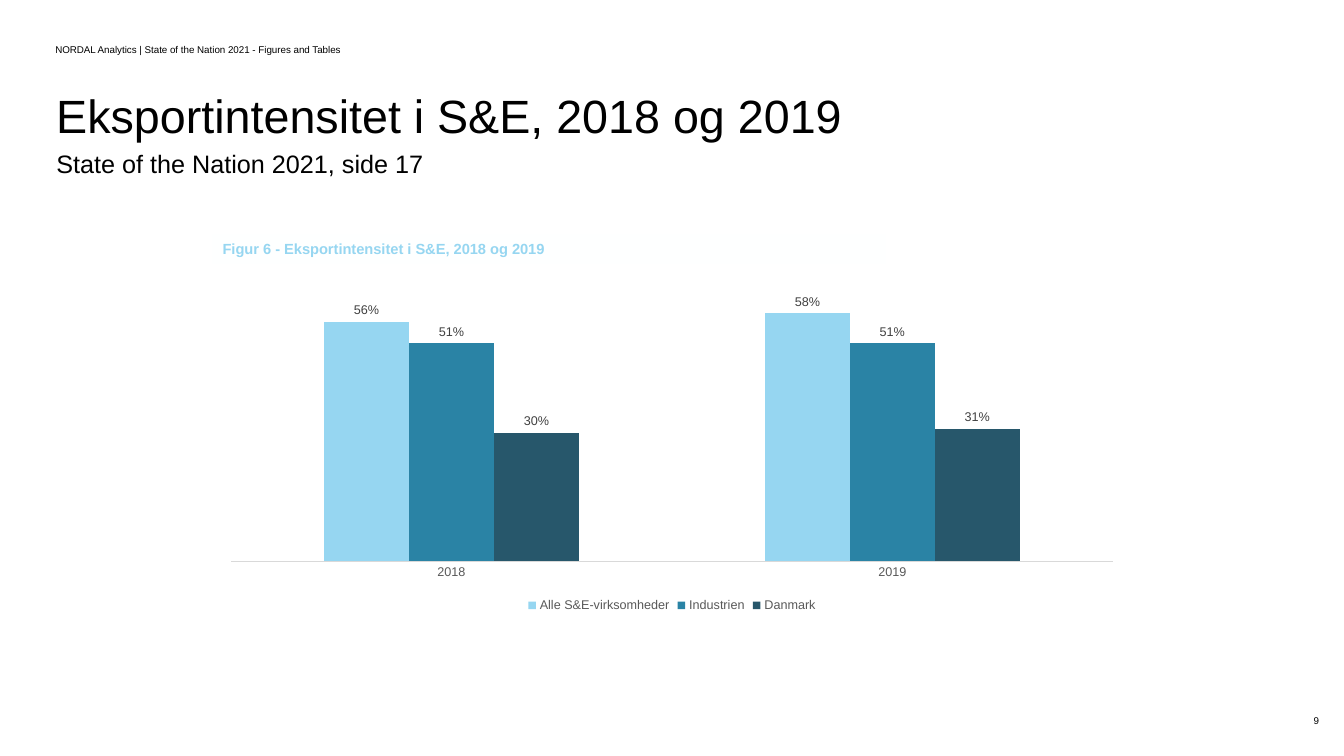
from lxml import etree
from pptx import Presentation, util as u
from pptx.chart.data import CategoryChartData
from pptx.dml.color import RGBColor
from pptx.enum import chart as ch, shapes, text
from pptx.oxml import parse_xml
from pptx.oxml.ns import nsdecls, qn

BLACK = RGBColor(0, 0, 0)
WHITE = RGBColor(0xFE, 0xFF, 0xFF)
SKY = RGBColor(0x96, 0xD6, 0xF1)
TEAL = RGBColor(0x2A, 0x83, 0xA5)
NAVY = RGBColor(0x27, 0x57, 0x6B)
GREY = RGBColor(0x59, 0x59, 0x59)
DARK = RGBColor(0x40, 0x40, 0x40)
PALE = RGBColor(0xD9, 0xD9, 0xD9)
FONT = "Arial"
MID = text.MSO_ANCHOR.MIDDLE
TOP = text.MSO_ANCHOR.TOP
LEFT = text.PP_ALIGN.LEFT
RIGHT = text.PP_ALIGN.RIGHT

# words, (left, top, width, height), size, anchor, alignment, line spacing
TEXTS = [
    ("9", (10.18, 6.95, 3, 0.4), 7, MID, RIGHT, 1),
    ("NORDAL Analytics | State of the Nation 2021 - Figures and Tables",
     (0.45, 0.29, 4.5, 0.4), 7, MID, LEFT, 1),
    ("Eksportintensitet i S&E, 2018 og 2019",
     (0.46, 0.92, 11.56, 0.58), 33.3, TOP, LEFT, 0.8),
    ("State of the Nation 2021, side 17",
     (0.46, 1.42, 4.78, 0.4), 18, TOP, LEFT, 1),
]
CAPTION = "Figur 6 - Eksportintensitet i S&E, 2018 og 2019"
CAP_BOX = (2.11, 2.33, 6.67, 0.28)
CHART_BOX = (2.11, 2.53, 9.11, 3.59)
PLOT = {"x": 0.02, "y": 0.02, "w": 0.96, "h": 0.826}
YEARS = ["2018", "2019"]
SERIES = [
    ("Alle S&E-virksomheder", (0.56, 0.58), SKY),
    ("Industrien", (0.51, 0.51), TEAL),
    ("Danmark", (0.30, 0.31), NAVY),
]


def inches(box):
    return [u.Inches(n) for n in box]


def style(font, size, color, bold=False):
    look = {"name": FONT, "size": u.Pt(size), "bold": bold}
    for key, value in look.items():
        setattr(font, key, value)
    font.color.rgb = color


def write(shape, words, size, color, anchor, align, gap=1, bold=False):
    frame = shape.text_frame
    frame.word_wrap = True
    frame.vertical_anchor = anchor
    para = frame.paragraphs[0]
    para.alignment = align
    para.line_spacing = gap
    run = para.add_run()
    run.text = words
    style(run.font, size, color, bold)


def place(chart):
    """Fix the inner plot area and leave the chart background clear."""
    area = chart._chartSpace.chart.plotArea
    for old in area.findall(qn("c:layout")):
        area.remove(old)
    layout = parse_xml(f"<c:layout {nsdecls('c')}><c:manualLayout/></c:layout>")
    parts = {"layoutTarget": "inner", "xMode": "edge", "yMode": "edge", **PLOT}
    for tag, value in parts.items():
        etree.SubElement(layout[0], qn(f"c:{tag}")).set("val", str(value))
    area.insert(0, layout)
    chart._chartSpace.chart.addnext(parse_xml(
        f"<c:spPr {nsdecls('c', 'a')}><a:noFill/><a:ln><a:noFill/></a:ln></c:spPr>"))


def add_bars(slide):
    data = CategoryChartData(number_format="0%")
    data.categories = YEARS
    for name, shares, _ in SERIES:
        data.add_series(name, shares)
    chart = slide.shapes.add_chart(
        ch.XL_CHART_TYPE.COLUMN_CLUSTERED, *inches(CHART_BOX), data).chart
    style(chart.font, 10, BLACK)
    chart.has_title = False
    chart.has_legend = True
    chart.legend.position = ch.XL_LEGEND_POSITION.BOTTOM
    chart.legend.include_in_layout = False
    style(chart.legend.font, 9, GREY)

    years = chart.category_axis
    years.major_tick_mark = ch.XL_TICK_MARK.NONE
    years.format.line.color.rgb = PALE
    years.format.line.width = u.Pt(0.75)
    style(years.tick_labels.font, 9, GREY)
    scale = chart.value_axis
    for key, value in {"visible": False, "has_major_gridlines": False,
                       "minimum_scale": 0, "maximum_scale": 0.7}.items():
        setattr(scale, key, value)

    plot = chart.plots[0]
    plot.gap_width, plot.overlap = 219, 0
    plot.vary_by_categories = False
    for bars, (_, _, color) in zip(plot.series, SERIES):
        bars.format.fill.solid()
        bars.format.fill.fore_color.rgb = color
        tags = bars.data_labels
        for key, value in {"show_value": True, "number_format": "0%",
                           "number_format_is_linked": False,
                           "position": ch.XL_LABEL_POSITION.OUTSIDE_END}.items():
            setattr(tags, key, value)
        style(tags.font, 9, DARK)
    place(chart)


def main():
    deck = Presentation()
    deck.slide_width, deck.slide_height = inches((13.33, 7.5))
    slide = deck.slides.add_slide(deck.slide_layouts[6])
    for words, box, size, anchor, align, gap in TEXTS:
        write(slide.shapes.add_textbox(*inches(box)),
              words, size, BLACK, anchor, align, gap)
    label = slide.shapes.add_shape(shapes.MSO_SHAPE.RECTANGLE, *inches(CAP_BOX))
    label.shadow.inherit = False
    label.fill.solid()
    label.fill.fore_color.rgb = WHITE
    label.line.fill.background()
    write(label, CAPTION, 10.5, SKY, TOP, LEFT, bold=True)
    add_bars(slide)
    deck.save("out.pptx")


if __name__ == "__main__":
    main()
